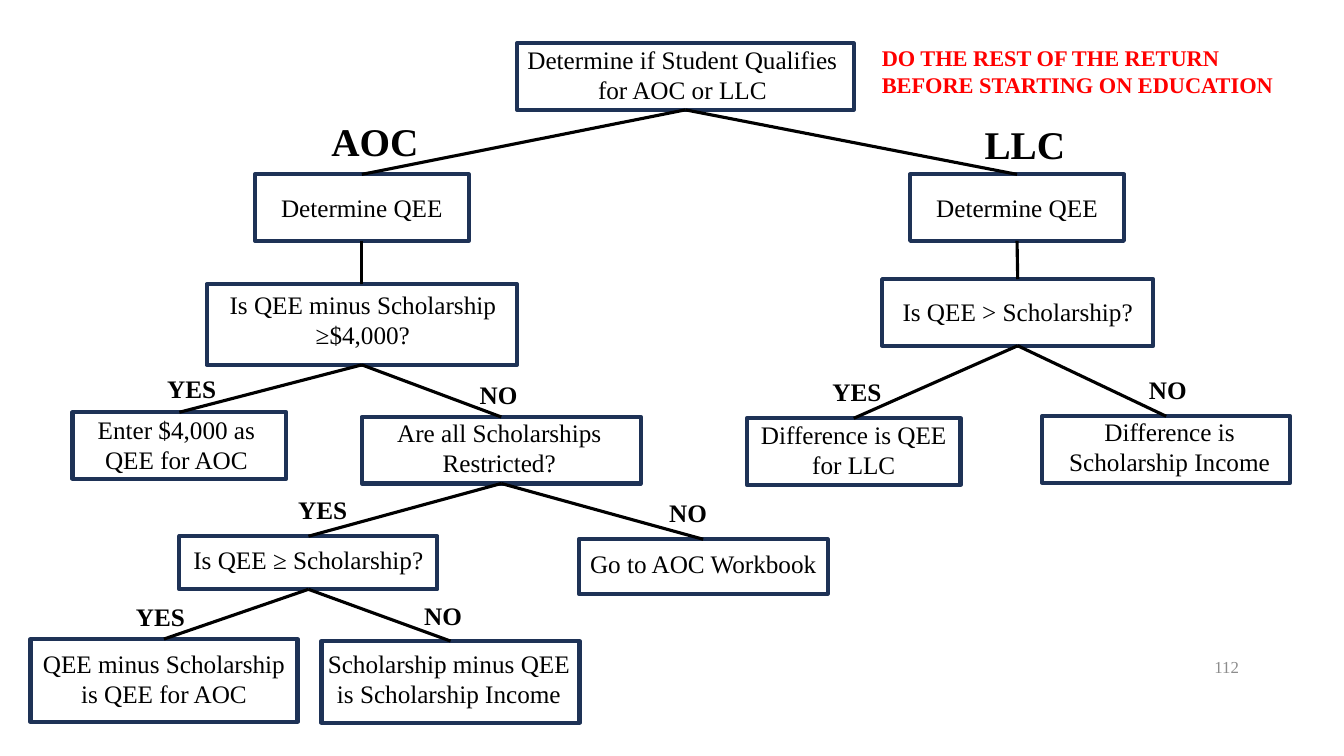
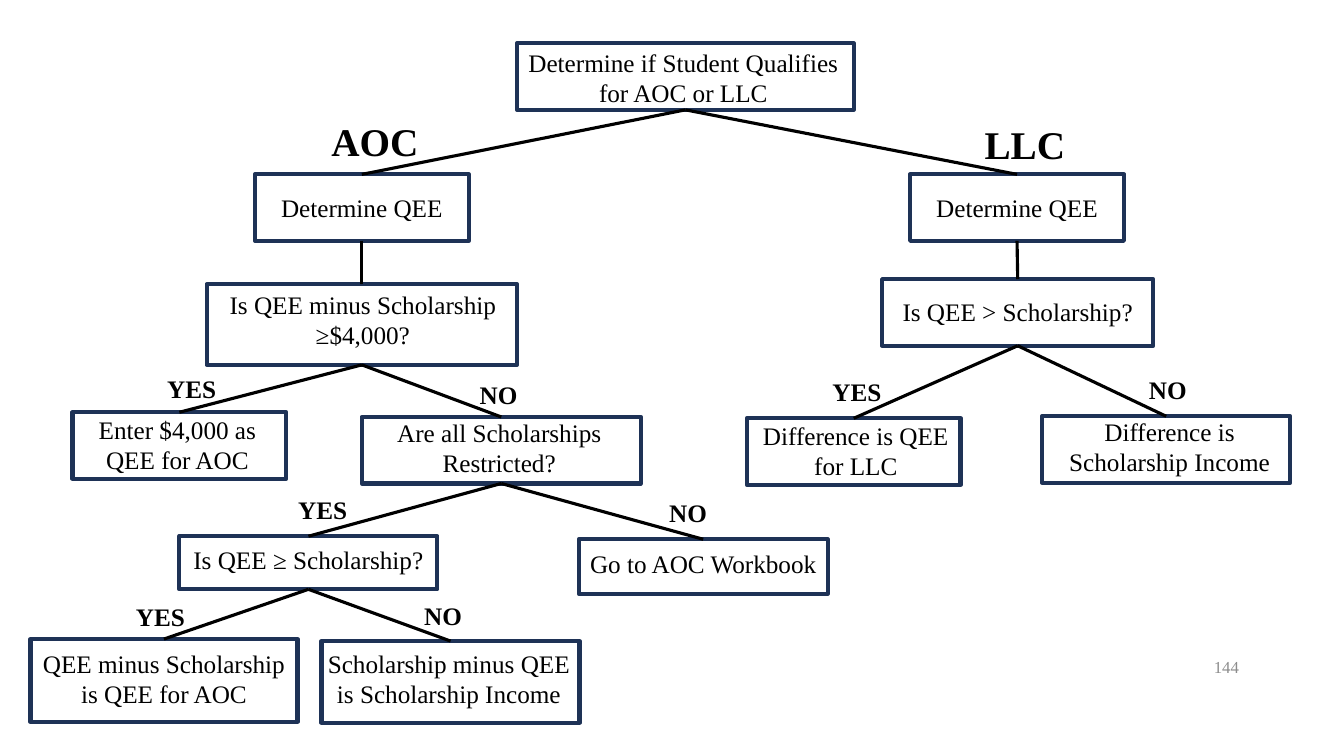
from dataclasses import dataclass, field, replace

from lxml import etree
from pptx import Presentation
from pptx import util as u
from pptx.dml.color import RGBColor
from pptx.enum import shapes, text
from pptx.oxml import ns

COLUMNS, ROWS = 40, 22.5
CELL = u.Inches(1) / 3
FONT = "Times New Roman"
COLORS = {"border": "1E3256", "ink": "000000", "warning": "FF0000", "number": "8C8C8C"}
WARNING = "DO THE REST OF THE RETURN BEFORE STARTING ON EDUCATION"
SIDE_INSET = 0.15
BOTTOM, TOP = 2, 0


@dataclass(frozen=True)
class Step:
    wording: str
    center: float
    top: float
    width: float
    height: float = 1.98
    drop: float = 0
    shift: float = 0


@dataclass(frozen=True)
class Branch:
    parent: str
    child: str
    label: str = ""
    left: float = 0
    top: float = 0
    width: float = 2.61
    height: float = 1.2
    size: int = 18


@dataclass(frozen=True)
class Chart:
    number: int
    warning: str = ""
    nudges: dict[str, dict[str, float]] = field(default_factory=dict)


STEPS = {
    "start": Step("Determine if Student Qualifies for AOC or LLC", 20.4, 1.29, 10.02, drop=0.03, shift=-0.09),
    "aoc expenses": Step("Determine QEE", 10.77, 5.19, 6.36, drop=0.54),
    "llc expenses": Step("Determine QEE", 30.27, 5.19, 6.36, drop=0.54),
    "aoc limit": Step("Is QEE minus Scholarship ≥$4,000?", 10.77, 8.46, 9.24, 2.4, drop=0.15, shift=0.03),
    "llc test": Step("Is QEE > Scholarship?", 30.29, 8.31, 8.07, drop=0.51),
    "aoc maximum": Step("Enter $4,000 as QEE for AOC", 5.34, 12.27, 6.36, drop=0.06, shift=-0.09),
    "restricted": Step("Are all Scholarships Restricted?", 14.92, 12.41, 8.31, shift=-0.06),
    "llc difference": Step("Difference is QEE for LLC", 25.41, 12.45, 6.36, drop=0.03),
    "llc income": Step("Difference is Scholarship Income", 34.71, 12.39, 7.38, shift=0.1),
    "aoc test": Step("Is QEE ≥ Scholarship?", 9.18, 15.96, 7.68, 1.58, drop=0.24),
    "workbook": Step("Go to AOC Workbook", 20.93, 16.05, 7.41, 1.62, drop=0.27),
    "aoc difference": Step("QEE minus Scholarship is QEE for AOC", 4.88, 19.02, 7.95, 2.46, drop=0.27),
    "aoc income": Step("Scholarship minus QEE is Scholarship Income", 13.41, 19.08, 7.68, 2.43, drop=0.21, shift=-0.05),
}

BRANCHES = [
    Branch("start", "aoc expenses", "AOC", 9.57, 3.33, 3.9, 1.71, 28),
    Branch("start", "llc expenses", "LLC", 29.01, 3.42, 3.48, 1.71, 28),
    Branch("aoc expenses", "aoc limit"),
    Branch("llc expenses", "llc test"),
    Branch("aoc limit", "aoc maximum", "YES", 4.68, 10.95),
    Branch("aoc limit", "restricted", "NO", 13.98, 11.13),
    Branch("llc test", "llc difference", "YES", 24.48, 11.04),
    Branch("llc test", "llc income", "NO", 33.9, 10.98),
    Branch("restricted", "aoc test", "YES", 8.58, 14.58),
    Branch("restricted", "workbook", "NO", 19.62, 14.64),
    Branch("aoc test", "aoc difference", "YES", 3.75, 17.76),
    Branch("aoc test", "aoc income", "NO", 12.33, 17.73),
]

CHARTS = [
    Chart(112, warning=WARNING),
    Chart(144, nudges={
        "start": {"drop": 0.12, "shift": -0.06},
        "aoc maximum": {"shift": -0.06},
        "llc difference": {"drop": 0.06, "shift": 0.06},
    }),
]


def cells(count: float) -> u.Emu:
    return u.Emu(round(count * CELL))


def color(name: str) -> RGBColor:
    return RGBColor.from_string(COLORS[name])


def write(box, wording: str, *, size: int = 18, ink: str = "ink", bold: bool = False,
          align=text.PP_ALIGN.LEFT, anchor=text.MSO_ANCHOR.TOP) -> None:
    frame = box.text_frame
    frame.word_wrap = True
    frame.vertical_anchor = anchor
    para = frame.paragraphs[0]
    para.alignment = align
    span = para.add_run()
    span.text = wording
    span.font.name = FONT
    span.font.size = u.Pt(size)
    span.font.bold = bold
    span.font.color.rgb = color(ink)


def add_text(page, wording: str, left: float, top: float, width: float, height: float, **style) -> None:
    box = page.shapes.add_textbox(*map(cells, (left, top, width, height)))
    write(box, wording, **style)


def add_step(page, step: Step):
    place = (step.center - step.width / 2, step.top, step.width, step.height)
    box = page.shapes.add_shape(shapes.MSO_SHAPE.RECTANGLE, *map(cells, place))
    box.shadow.inherit = False
    box.fill.background()
    box.line.color.rgb = color("border")
    box.line.width = u.Pt(3)
    frame = box.text_frame
    frame.margin_left = cells(SIDE_INSET + step.shift)
    frame.margin_right = cells(SIDE_INSET - step.shift)
    frame.margin_top = cells(step.drop)
    frame.margin_bottom = 0
    write(box, step.wording, align=text.PP_ALIGN.CENTER)
    return box


def add_branch(page, branch: Branch, boxes: dict) -> None:
    line = page.shapes.add_connector(shapes.MSO_CONNECTOR.STRAIGHT, 0, 0, 0, 0)
    line.begin_connect(boxes[branch.parent], BOTTOM)
    line.end_connect(boxes[branch.child], TOP)
    line.line.color.rgb = color("ink")
    line.line.width = u.Pt(2.25)
    etree.SubElement(line._element.spPr, ns.qn("a:effectLst"))
    if branch.label:
        add_text(page, branch.label, branch.left, branch.top, branch.width, branch.height,
                 size=branch.size, bold=True)


def add_chart_page(deck, chart: Chart) -> None:
    page = deck.slides.add_slide(deck.slide_layouts[6])
    add_text(page, str(chart.number), 28.17, 19.26, 9, 1.2, size=12, ink="number",
             align=text.PP_ALIGN.RIGHT, anchor=text.MSO_ANCHOR.MIDDLE)
    boxes = {name: add_step(page, replace(step, **chart.nudges.get(name, {})))
             for name, step in STEPS.items()}
    for branch in BRANCHES:
        add_branch(page, branch, boxes)
    if chart.warning:
        add_text(page, chart.warning, 25.95, 1.17, 13.41, 1.92, size=16, ink="warning", bold=True)


def main() -> None:
    deck = Presentation()
    deck.slide_width, deck.slide_height = cells(COLUMNS), cells(ROWS)
    for chart in CHARTS:
        add_chart_page(deck, chart)
    deck.save("out.pptx")


if __name__ == "__main__":
    main()
